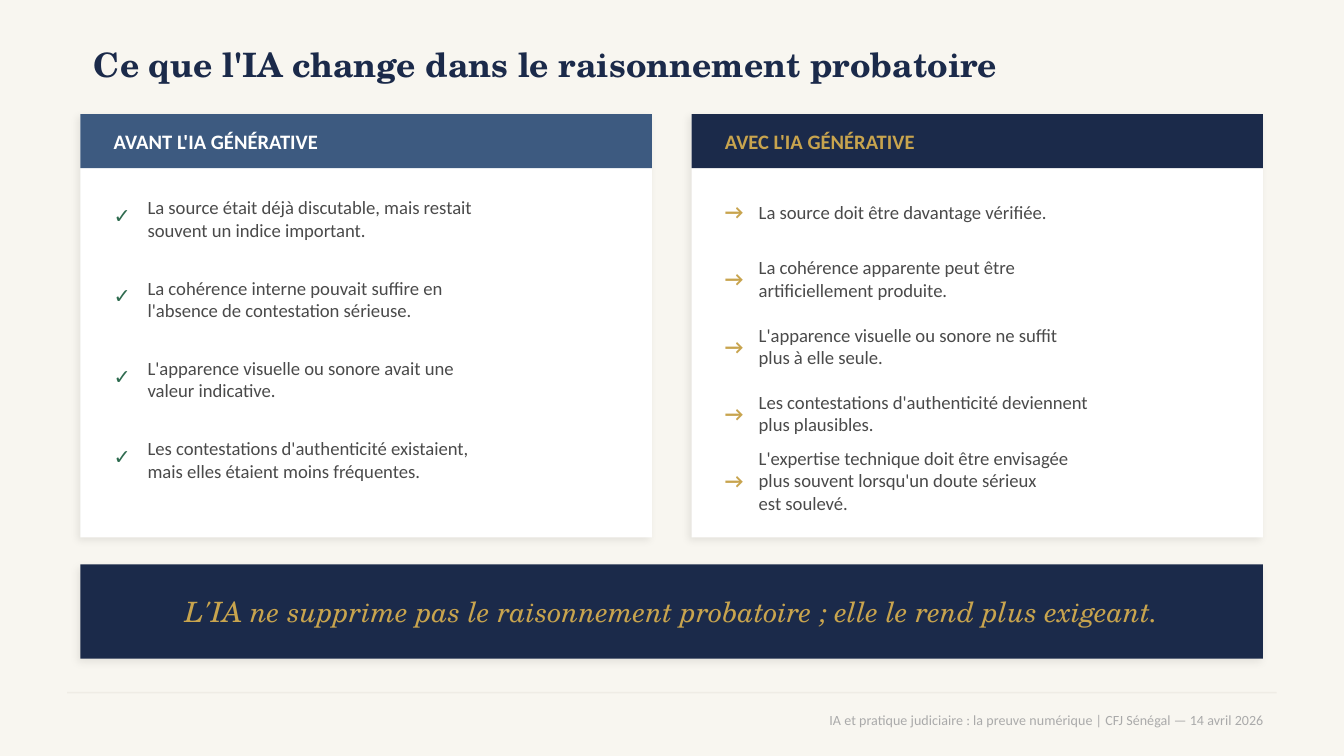
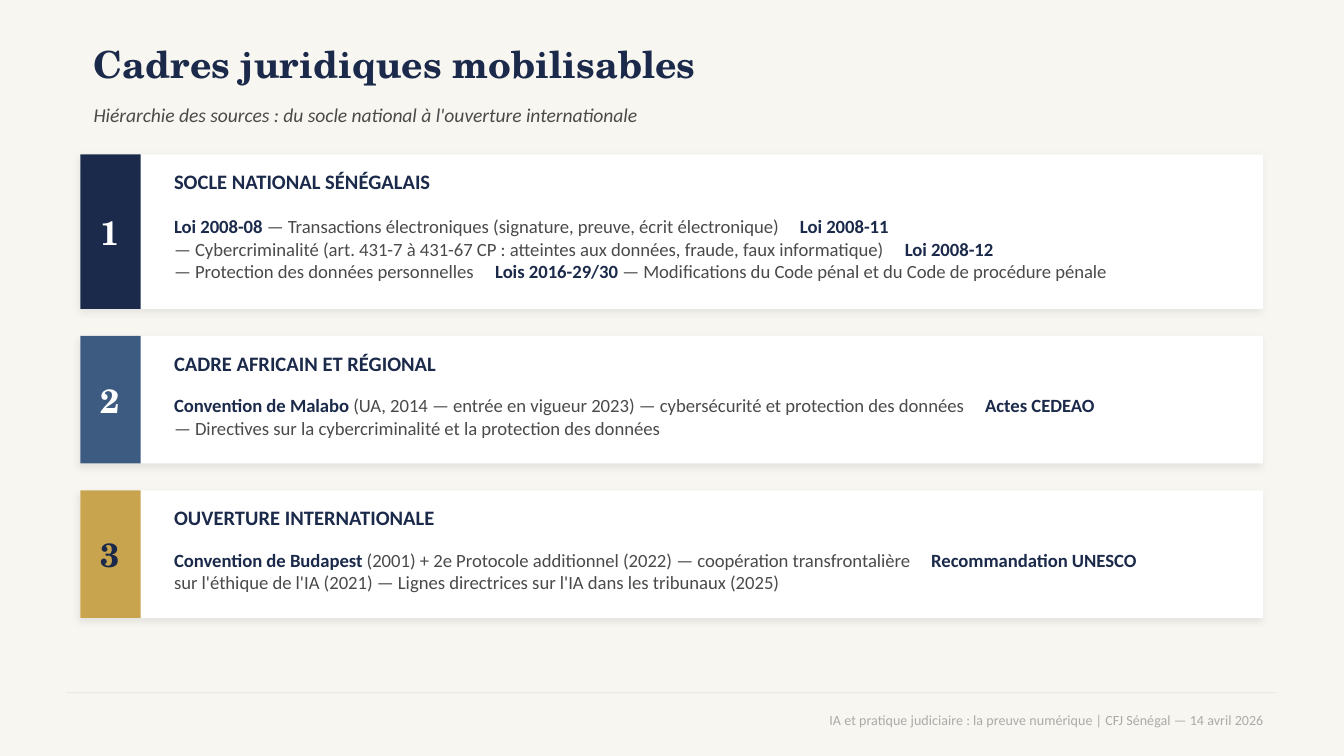
from lxml import etree
from pptx import Presentation
from pptx.dml.color import RGBColor
from pptx.enum.shapes import MSO_SHAPE as Preset
from pptx.enum.text import MSO_ANCHOR as Anchor, PP_ALIGN as Align
from pptx.oxml.ns import qn
from pptx.util import Cm, Pt

# Shared palette, fonts and text formats
NAVY, BLUE, GOLD, GREEN = "1B2A4A", "3D5A80", "C8A44E", "2E6B4F"
CREAM, WHITE, RULE, BODY, MUTED = "F8F6F0", "FFFFFF", "EFECE5", "4A4A4A", "AAAAAA"
SERIF, SANS = "TeX Gyre Schola", "Calibri"


def text_format(color, size, name=SANS, bold=False, italic=False):
    return dict(color=color, size=Pt(size), name=name, bold=bold, italic=italic)


BODY_TEXT = text_format(BODY, 10)
TERM = text_format(NAVY, 10, bold=True)
SUBTITLE = text_format(BODY, 10.5, italic=True)
FOOTER = text_format(MUTED, 7.5)
QUOTE = text_format(GOLD, 15, SERIF, italic=True)

# Shared grid, in centimetres
LEFT, CONTENT_WIDTH = 1.52, 22.35
COLUMN_WIDTH, HEADER_HEIGHT = 10.8, 1.02
TEXT_INDENT = 0.38
FOOTER_TEXT = "IA et pratique judiciaire : la preuve numérique | CFJ Sénégal — 14 avril 2026"

# Slide 1: two columns
BEFORE = [
    ["La source était déjà discutable, mais restait", "souvent un indice important."],
    ["La cohérence interne pouvait suffire en", "l'absence de contestation sérieuse."],
    ["L'apparence visuelle ou sonore avait une", "valeur indicative."],
    ["Les contestations d'authenticité existaient,", "mais elles étaient moins fréquentes."],
]
WITH_AI = [
    ["La source doit être davantage vérifiée."],
    ["La cohérence apparente peut être", "artificiellement produite."],
    ["L'apparence visuelle ou sonore ne suffit", "plus à elle seule."],
    ["Les contestations d'authenticité deviennent", "plus plausibles."],
    ["L'expertise technique doit être envisagée", "plus souvent lorsqu'un doute sérieux",
     "est soulevé."],
]

# Slide 2: band colour, number colour, height, heading, lines (*term*), tab stop of each line
TIERS = [
    (NAVY, WHITE, 2.92, "SOCLE NATIONAL SÉNÉGALAIS", [
        "*Loi 2008-08 *— Transactions électroniques (signature, preuve, écrit électronique)\t*Loi 2008-11*",
        "— Cybercriminalité (art. 431-7 à 431-67 CP : atteintes aux données, fraude, "
        "faux informatique)\t*Loi 2008-12*",
        "— Protection des données personnelles\t*Lois 2016-29/30 *"
        "— Modifications du Code pénal et du Code de procédure pénale",
    ], [11.83, 13.81, 6.07]),
    (BLUE, WHITE, 2.41, "CADRE AFRICAIN ET RÉGIONAL", [
        "*Convention de Malabo *(UA, 2014 — entrée en vigueur 2023) — cybersécurité et "
        "protection des données\t*Actes CEDEAO*",
        "— Directives sur la cybercriminalité et la protection des données",
    ], [15.33]),
    (GOLD, NAVY, 2.41, "OUVERTURE INTERNATIONALE", [
        "*Convention de Budapest *(2001) + 2e Protocole additionnel (2022) — "
        "coopération transfrontalière\t*Recommandation UNESCO*",
        "sur l'éthique de l'IA (2021) — Lignes directrices sur l'IA dans les tribunaux (2025)",
    ], [14.31]),
]


def rgb(value):
    return RGBColor.from_string(value)


def apply_format(font, values):
    for attribute, value in values.items():
        if attribute == "color":
            font.color.rgb = rgb(value)
        else:
            setattr(font, attribute, value)


def add_tab_stop(paragraph, position):
    stops = etree.SubElement(paragraph._p.get_or_add_pPr(), qn("a:tabLst"))
    etree.SubElement(stops, qn("a:tab"), pos=str(Cm(position)), algn="l")


def write(frame, lines, values, align=Align.LEFT, tab_stops=()):
    """Fill a frame, one paragraph a line; parts between asterisks are terms."""
    frame.word_wrap = True
    frame.vertical_anchor = Anchor.MIDDLE
    for index, line in enumerate(lines):
        paragraph = frame.add_paragraph() if index else frame.paragraphs[0]
        paragraph.alignment = align
        if index < len(tab_stops):
            add_tab_stop(paragraph, tab_stops[index])
        for order, part in enumerate(line.split("*")):
            if part:
                run = paragraph.add_run()
                run.text = part
                apply_format(run.font, TERM if order % 2 else values)


def add_text(slide, box, lines, values, align=Align.LEFT, tab_stops=()):
    label = slide.shapes.add_textbox(*map(Cm, box))
    write(label.text_frame, lines, values, align, tab_stops)


def add_block(slide, box, color, raised=False):
    block = slide.shapes.add_shape(Preset.RECTANGLE, *map(Cm, box))
    block.fill.solid()
    block.fill.fore_color.rgb = rgb(color)
    block.line.fill.background()
    block.shadow.inherit = False
    if raised:
        effects = block._element.spPr.find(qn("a:effectLst"))
        shadow = etree.SubElement(effects, qn("a:outerShdw"), blurRad=str(Pt(4)),
                                  dist=str(Pt(2)), dir=str(135 * 60000),
                                  algn="bl", rotWithShape="0")
        tint = etree.SubElement(shadow, qn("a:srgbClr"), val="000000")
        etree.SubElement(tint, qn("a:alpha"), val="8000")


def add_page(deck, heading, size):
    """Title-only slide with its heading, footer rule and footer."""
    slide = deck.slides.add_slide(deck.slide_layouts[5])
    title = slide.shapes.title
    title.left, title.top, title.width, title.height = map(Cm, (LEFT, 0.64, 22.86, 1.14))
    write(title.text_frame, [heading], text_format(NAVY, size, SERIF, bold=True))
    add_block(slide, (1.27, 13.08, 22.86, 0.03), RULE)
    add_text(slide, (1.27, 13.16, 22.86, 0.89), [FOOTER_TEXT], FOOTER, Align.RIGHT)
    return slide


def add_column(slide, left, heading, band, heading_color, mark, mark_color, points,
               step, mark_height, point_height):
    top = 2.16
    text_left = left + TEXT_INDENT
    add_block(slide, (left, top, COLUMN_WIDTH, 8), WHITE, raised=True)
    add_block(slide, (left, top, COLUMN_WIDTH, HEADER_HEIGHT), band)
    add_text(slide, (text_left, top, 10.16, HEADER_HEIGHT), [heading],
             text_format(heading_color, 11, bold=True))
    for index, lines in enumerate(points):
        y = 3.43 + index * step
        add_text(slide, (text_left, y, 0.64, mark_height), [mark],
                 text_format(mark_color, 11, bold=True))
        add_text(slide, (text_left + 0.64, y, 9.14, point_height), lines, BODY_TEXT)


def add_tier(slide, top, number, band, number_color, height, heading, lines, tab_stops):
    band_box = (LEFT, top, 1.14, height)
    text_left = LEFT + 1.14 + TEXT_INDENT
    add_block(slide, (LEFT, top, CONTENT_WIDTH, height), WHITE, raised=True)
    add_block(slide, band_box, band)
    add_text(slide, band_box, [str(number)],
             text_format(number_color, 18, SERIF, bold=True), Align.CENTER)
    add_text(slide, (text_left, top + 0.13, 10.16, 0.76), [heading],
             text_format(NAVY, 11, bold=True))
    add_text(slide, (text_left, top + 0.89, 20.32, height - 1.14), lines, BODY_TEXT,
             tab_stops=tab_stops)


def build_comparison(deck):
    slide = add_page(deck, "Ce que l'IA change dans le raisonnement probatoire", 18)
    add_column(slide, LEFT, "AVANT L'IA GÉNÉRATIVE", BLUE, WHITE, "✓", GREEN, BEFORE,
               step=1.52, mark_height=1.27, point_height=1.4)
    add_column(slide, LEFT + CONTENT_WIDTH - COLUMN_WIDTH, "AVEC L'IA GÉNÉRATIVE", NAVY, GOLD,
               "→", GOLD, WITH_AI, step=1.27, mark_height=1.14, point_height=1.14)
    # Conclusion band
    add_block(slide, (LEFT, 10.67, CONTENT_WIDTH, 1.78), NAVY, raised=True)
    add_text(slide, (LEFT + 0.51, 10.67, CONTENT_WIDTH - 1.02, 1.78),
             ["L'IA ne supprime pas le raisonnement probatoire ; elle le rend plus exigeant."],
             QUOTE, Align.CENTER)


def build_frameworks(deck):
    slide = add_page(deck, "Cadres juridiques mobilisables", 20)
    add_text(slide, (LEFT, 1.78, 22.86, 0.76),
             ["Hiérarchie des sources : du socle national à l'ouverture internationale"], SUBTITLE)
    top, gap = 2.92, 0.51
    for number, tier in enumerate(TIERS, start=1):
        add_tier(slide, top, number, *tier)
        top += tier[2] + gap


def main():
    deck = Presentation()
    deck.slide_width, deck.slide_height = Cm(25.4), Cm(14.29)
    backdrop = deck.slide_master.background.fill
    backdrop.solid()
    backdrop.fore_color.rgb = rgb(CREAM)
    build_comparison(deck)
    build_frameworks(deck)
    deck.save("out.pptx")


if __name__ == "__main__":
    main()
